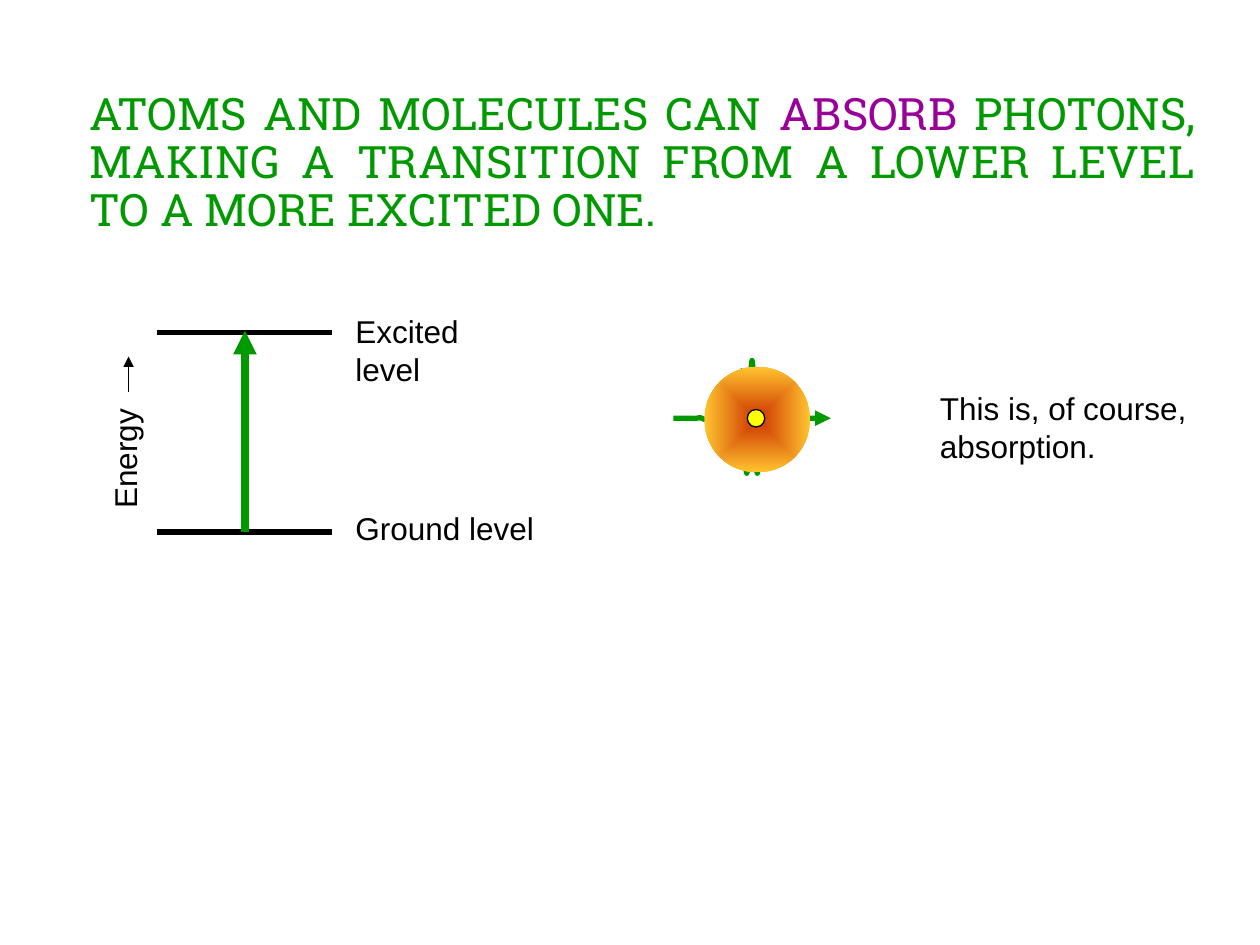
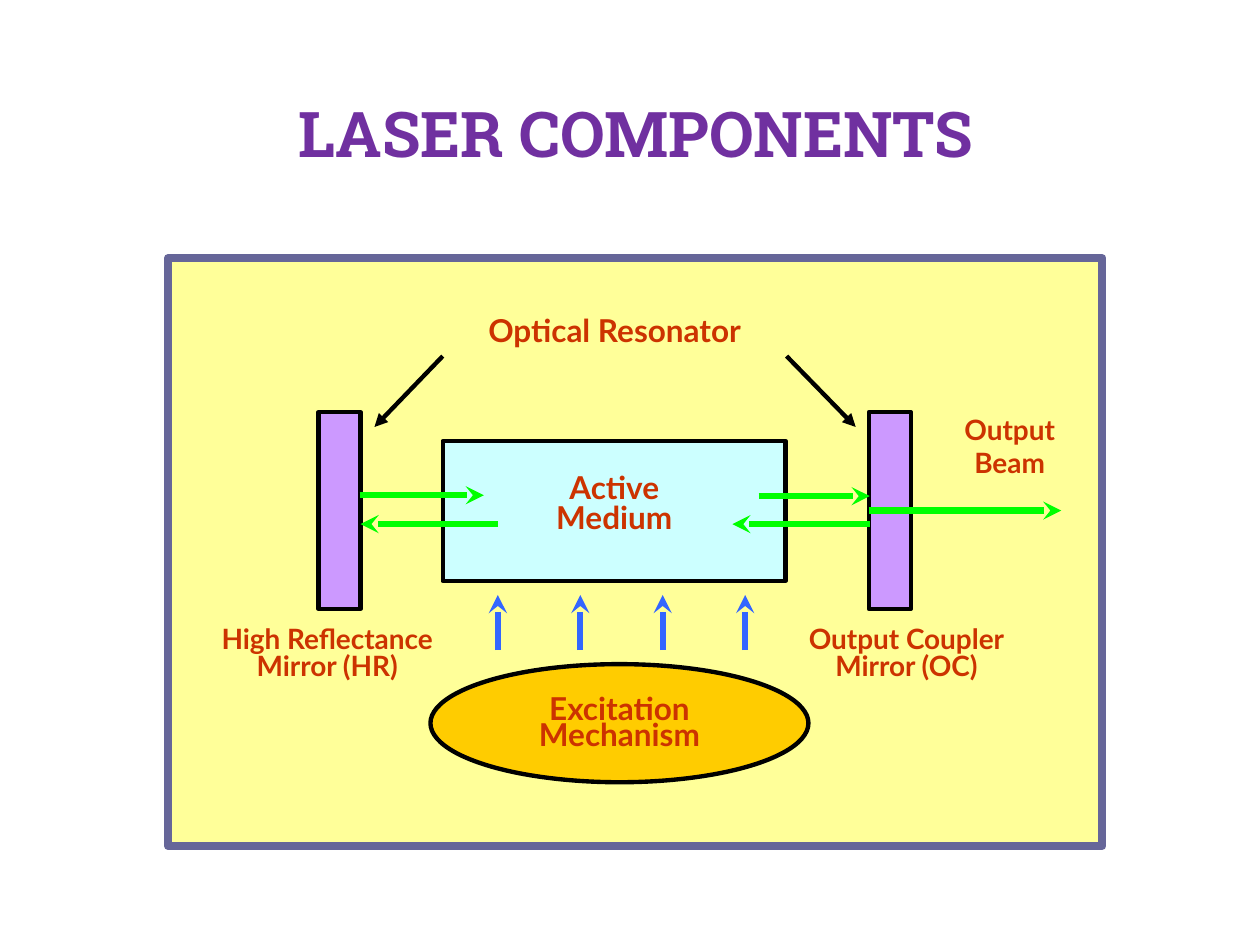
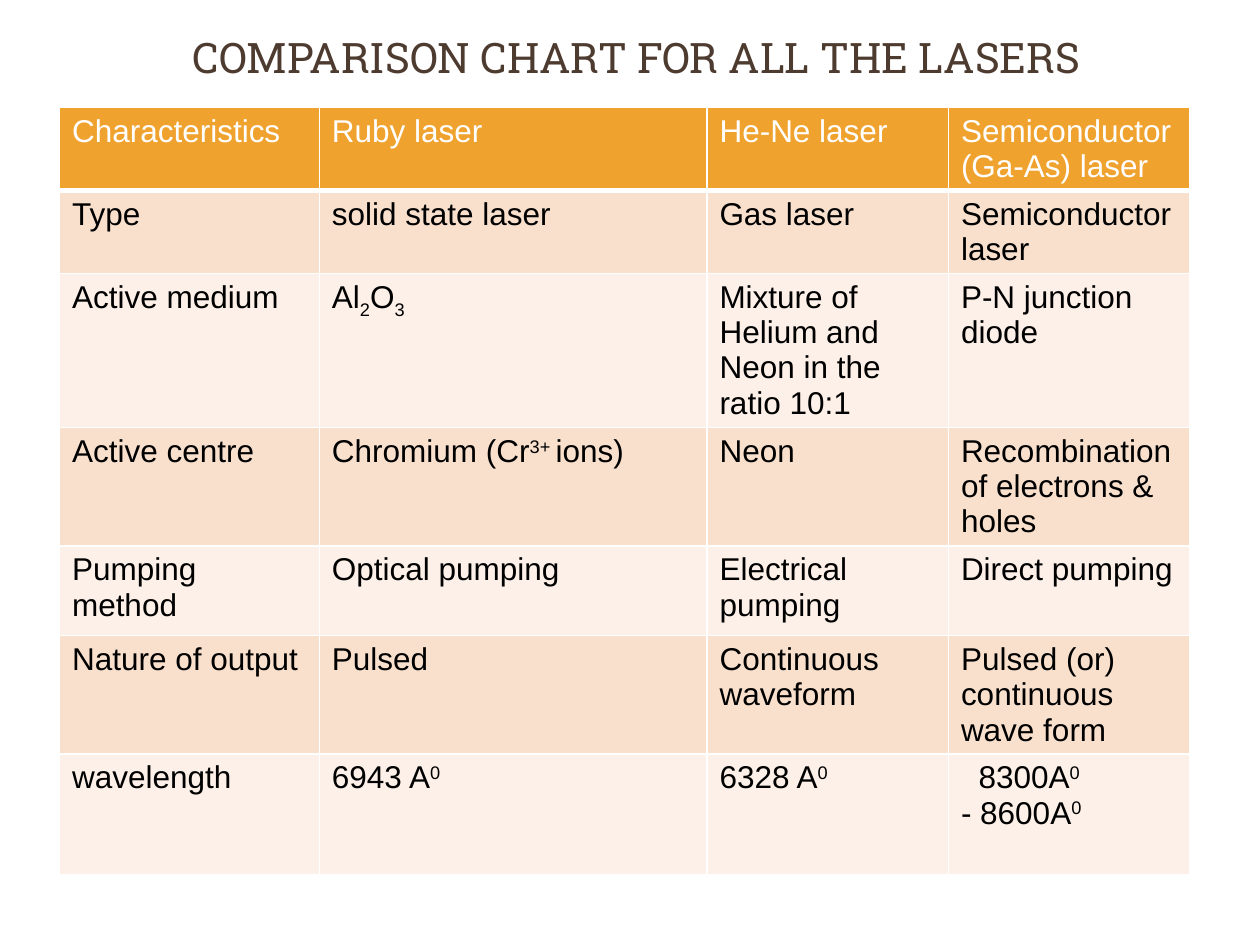
"""Build three slides on photon absorption, laser components and laser types."""
import math

import lxml.etree
import pptx
import pptx.dml.color
import pptx.enum.shapes
import pptx.enum.text
import pptx.oxml.ns
import pptx.util

Pt = pptx.util.Pt
RGBColor = pptx.dml.color.RGBColor
qn = pptx.oxml.ns.qn
ALIGN = pptx.enum.text.PP_ALIGN
ANCHOR = pptx.enum.text.MSO_ANCHOR
SHAPE = pptx.enum.shapes.MSO_SHAPE

BLACK = RGBColor(0x00, 0x00, 0x00)
WHITE = RGBColor(0xFF, 0xFF, 0xFF)
GREEN = RGBColor(0x00, 0x99, 0x00)
MAGENTA = RGBColor(0x99, 0x00, 0x99)
PURPLE = RGBColor(0x70, 0x30, 0xA0)
BROWN = RGBColor(0x4E, 0x3B, 0x30)
RUST = RGBColor(0xCC, 0x33, 0x00)
AMBER = RGBColor(0xFF, 0xC4, 0x2F)
YELLOW = RGBColor(0xFF, 0xFF, 0x00)
PALE_YELLOW = RGBColor(0xFF, 0xFF, 0x99)
SLATE = RGBColor(0x66, 0x66, 0x99)
PALE_CYAN = RGBColor(0xCC, 0xFF, 0xFF)
LILAC = RGBColor(0xCC, 0x99, 0xFF)
GOLD = RGBColor(0xFF, 0xCC, 0x00)
LIME = RGBColor(0x00, 0xFF, 0x00)
BLUE = RGBColor(0x33, 0x66, 0xFF)
HEADER = RGBColor(0xF0, 0xA2, 0x2E)
BANDS = [RGBColor(0xFC, 0xF0, 0xE8), RGBColor(0xF9, 0xE0, 0xCD)]

TITLE_FONT, BODY_FONT, DIAGRAM_FONT = "Roboto Slab", "Arial", "Lato"

ABSORPTION_TITLE = [
    ("ATOMS AND MOLECULES CAN ", GREEN),
    ("ABSORB", MAGENTA),
    (" PHOTONS, MAKING A TRANSITION FROM A LOWER LEVEL TO A MORE EXCITED ONE.", GREEN),
]
COMPONENTS_TITLE = [("LASER COMPONENTS", PURPLE)]
COMPARISON_TITLE = [("COMPARISON CHART FOR ALL THE LASERS", BROWN)]

LEVEL_LABELS = [
    (["Ground level"], (196, 287.5, 116.5, 29)),
    (["Excited level"], (196, 175, 115, 29)),
]
LEVEL_HEIGHTS = [304, 190]
PHOTON_CENTRE, PHOTON_HALF_LENGTH, PHOTON_STEP = (429.75, 239), 45, 0.25
PHOTON_AMPLITUDE, PHOTON_PERIOD, PHOTON_WIDTH = 33, 6.05, 13.6

BEAMS = [
    ((433.5, 283.5), (497, 283.5)),
    ((205.5, 283), (276.5, 283)),
    ((284.5, 299.5), (206, 299.5)),
    ((497, 299.5), (418.5, 299.5)),
]
POINTERS = [((253, 203.5), (214, 244)), ((449.5, 203.5), (489, 244))]
PUMP_LEFT, PUMP_GAP, PUMP_COUNT = 284.5, 47.1, 4
MIRROR_LABELS = [
    (["High Reflectance", "Mirror (HR)"], (103.5, 355.5, 167, 38)),
    (["Output Coupler", "Mirror (OC)"], (452, 355.5, 132, 38)),
]

COLUMN_WIDTHS = [148.5, 221.5, 138, 138]
ROW_HEIGHTS = [47.5, 47.5, 88, 67.5, 51.25, 67.5, 69]
COMPARISON = [
    ["Characteristics", "Ruby laser", "He-Ne laser", "Semiconductor (Ga-As) laser"],
    ["Type", "solid state laser", "Gas laser", "Semiconductor laser"],
    ["Active medium", "Al|_2|O|_3", "Mixture of Helium and Neon in the ratio 10:1",
     "P-N junction diode"],
    ["Active centre", "Chromium (Cr|^3+ |ions)", "Neon", "Recombination of electrons & holes"],
    ["Pumping method", "Optical pumping", "Electrical pumping", "Direct pumping"],
    ["Nature of output", "Pulsed", "Continuous waveform", "Pulsed (or) continuous wave form"],
    ["wavelength", "6943 A|^0", "6328 A|^0", "8300A|^0\n- 8600A|^0"],
]
BASELINES = {"_": "-25000", "^": "30000"}
WAVELENGTH_INDENT = 10


def points(values):
    return [Pt(value) for value in values]


def set_font(font, name, size, color, bold=False):
    font.name, font.size, font.bold = name, Pt(size), bold
    font.color.rgb = color


def add_titled_slide(presentation, parts, box, size, bold=False, align=ALIGN.CENTER,
                     anchor=ANCHOR.MIDDLE, spacing=1.0):
    slide = presentation.slides.add_slide(presentation.slide_layouts[5])
    title = slide.shapes.title
    title.left, title.top, title.width, title.height = points(box)
    frame = title.text_frame
    frame.auto_size = pptx.enum.text.MSO_AUTO_SIZE.NONE
    frame.word_wrap = True
    frame.vertical_anchor = anchor
    paragraph = frame.paragraphs[0]
    paragraph.alignment, paragraph.line_spacing = align, spacing
    set_font(paragraph.font, TITLE_FONT, size, parts[0][1], bold)
    for text, color in parts:
        run = paragraph.add_run()
        run.text = text
        if color != parts[0][1]:
            run.font.color.rgb = color
    return slide


def add_label(slide, lines, box, font=BODY_FONT, size=18, color=BLACK, bold=False,
              align=ALIGN.LEFT, spacing=1.0, wrap=False, fill=None):
    label = slide.shapes.add_textbox(*points(box))
    if fill is not None:
        label.fill.solid()
        label.fill.fore_color.rgb = fill
    frame = label.text_frame
    frame.word_wrap = wrap
    for index, line in enumerate(lines):
        paragraph = frame.add_paragraph() if index else frame.paragraphs[0]
        paragraph.text = line
        paragraph.alignment, paragraph.line_spacing = align, spacing
        set_font(paragraph.font, font, size, color, bold)
    return label


def add_diagram_label(slide, lines, box, size=18, spacing=0.8, **options):
    return add_label(slide, lines, box, DIAGRAM_FONT, size, RUST, True,
                     ALIGN.CENTER, spacing, **options)


def style_line(shape, color, width, head=None):
    shape.line.color.rgb = color
    shape.line.width = Pt(width)
    if head:
        outline = shape.element.spPr.find(qn("a:ln"))
        lxml.etree.SubElement(outline, qn("a:tailEnd"), type=head)


def add_line(slide, start, end, color, width, head=None):
    line = slide.shapes.add_connector(
        pptx.enum.shapes.MSO_CONNECTOR.STRAIGHT, *points((*start, *end)))
    style_line(line, color, width, head)
    lxml.etree.SubElement(line.element.spPr, qn("a:effectLst"))
    return line


def add_block(slide, kind, box, fill, line=BLACK, width=2.5):
    block = slide.shapes.add_shape(kind, *points(box))
    block.shadow.inherit = False
    block.fill.solid()
    block.fill.fore_color.rgb = fill
    style_line(block, line, width)
    return block


def add_photon(slide):
    centre_x, centre_y = PHOTON_CENTRE
    steps = int(PHOTON_HALF_LENGTH / PHOTON_STEP)
    wave = []
    for step in range(-steps, steps + 1):
        offset = step * PHOTON_STEP
        envelope = PHOTON_AMPLITUDE * math.exp(-(offset / PHOTON_WIDTH) ** 2)
        height = envelope * math.cos(2 * math.pi * offset / PHOTON_PERIOD)
        wave.append((Pt(centre_x + offset), Pt(centre_y - height)))
    builder = slide.shapes.build_freeform(*wave[0])
    builder.add_line_segments(wave[1:], close=False)
    photon = builder.convert_to_shape()
    photon.shadow.inherit = False
    photon.fill.background()
    style_line(photon, GREEN, 3, "triangle")


def add_atom(slide):
    cloud = slide.shapes.add_shape(SHAPE.OVAL, *points((402.5, 209.5, 60.5, 60.5)))
    cloud.shadow.inherit = False
    cloud.line.fill.background()
    cloud.fill.gradient()
    for stop, color in zip(cloud.fill.gradient_stops, (RUST, AMBER)):
        stop.color.rgb = color
    gradient = cloud.element.spPr.find(qn("a:gradFill"))
    gradient.remove(gradient.find(qn("a:lin")))
    shading = lxml.etree.SubElement(gradient, qn("a:path"), path="shape")
    lxml.etree.SubElement(shading, qn("a:fillToRect"),
                          {side: "50000" for side in "ltrb"})
    add_block(slide, SHAPE.OVAL, (427, 234, 10, 10), YELLOW, width=0.75)


def build_absorption(presentation):
    slide = add_titled_slide(presentation, ABSORPTION_TITLE, (44, 36.75, 646.5, 102), 25.5,
                             align=ALIGN.JUSTIFY, anchor=ANCHOR.BOTTOM, spacing=0.9)
    add_label(slide, ["This is, of course, absorption."], (530, 219, 168, 51), wrap=True)
    add_photon(slide)
    add_atom(slide)
    for height in LEVEL_HEIGHTS:
        add_line(slide, (89.5, height), (190, height), BLACK, 3)
    energy = add_label(slide, ["Energy"], (35.5, 247.5, 71.5, 29))
    energy.rotation = 270
    add_line(slide, (73.5, 224), (73.5, 203.75), BLACK, 0.75, "triangle")
    for lines, box in LEVEL_LABELS:
        add_label(slide, lines, box)
    add_line(slide, (140, 304), (140, 189), GREEN, 4.5, "triangle")


def build_components(presentation):
    slide = add_titled_slide(presentation, COMPONENTS_TITLE, (57.5, 50.5, 612, 72.5), 36,
                             bold=True, anchor=ANCHOR.TOP)
    add_block(slide, SHAPE.RECTANGLE, (96, 147.5, 534, 336), PALE_YELLOW, SLATE, 4.5)
    add_block(slide, SHAPE.RECTANGLE, (253, 252, 196, 80), PALE_CYAN)
    high_reflector, output_coupler = [
        add_block(slide, SHAPE.RECTANGLE, (left, 235.5, 24, 112.5), LILAC)
        for left in (182, 496.5)]
    for lines, box in MIRROR_LABELS:
        add_diagram_label(slide, lines, box, 16, fill=PALE_YELLOW)
    add_diagram_label(slide, ["Active", "Medium"], (306, 268, 90, 46))
    for start, end in BEAMS:
        add_line(slide, start, end, LIME, 3.5, "stealth")
    add_block(slide, SHAPE.OVAL, (246, 379.5, 216, 67.5), GOLD)
    output_beam = add_line(slide, (496.5, 291.75), (606.5, 291.75), LIME, 3.5, "stealth")
    output_beam.begin_connect(output_coupler, 1)
    add_diagram_label(slide, ["Output", "Beam"], (543.5, 232, 67, 46), 16, 1.0,
                      fill=PALE_YELLOW)
    for index in range(PUMP_COUNT):
        left = PUMP_LEFT + index * PUMP_GAP
        add_line(slide, (left, 371.5), (left, 340), BLUE, 3.5, "stealth")
    add_diagram_label(slide, ["Excitation Mechanism"], (276.5, 396, 155, 41), spacing=0.7,
                      wrap=True)
    add_diagram_label(slide, ["Optical Resonator"], (237.5, 180, 227.5, 24), spacing=0.7,
                      wrap=True)
    for start, end in POINTERS:
        add_line(slide, start, end, BLACK, 2.5, "triangle")


def set_borders(cell, bottom):
    properties = cell._tc.get_or_add_tcPr()
    for side, width in (("L", 1), ("R", 1), ("T", 1), ("B", bottom)):
        border = lxml.etree.SubElement(properties, qn("a:ln" + side), w=str(Pt(width)))
        fill = lxml.etree.SubElement(border, qn("a:solidFill"))
        lxml.etree.SubElement(fill, qn("a:srgbClr"), val=str(WHITE))


def fill_cell(cell, content, is_header, band):
    set_borders(cell, 3 if is_header else 1)
    cell.fill.solid()
    cell.fill.fore_color.rgb = HEADER if is_header else band
    lines = content.split("\n")
    for index, line in enumerate(lines):
        frame = cell.text_frame
        paragraph = frame.add_paragraph() if index else frame.paragraphs[0]
        if len(lines) > 1 and index == 0:
            paragraph._p.get_or_add_pPr().set("marL", str(Pt(WAVELENGTH_INDENT)))
        set_font(paragraph.font, BODY_FONT, 18, WHITE if is_header else BLACK)
        for part in line.split("|"):
            run = paragraph.add_run()
            run.text = part.lstrip("_^")
            if part[0] in BASELINES:
                run._r.get_or_add_rPr().set("baseline", BASELINES[part[0]])


def build_comparison(presentation):
    slide = add_titled_slide(presentation, COMPARISON_TITLE, (58.5, 8.5, 610.5, 47.5), 24)
    box = (34, 61.25, sum(COLUMN_WIDTHS), sum(ROW_HEIGHTS))
    table = slide.shapes.add_table(len(ROW_HEIGHTS), len(COLUMN_WIDTHS), *points(box)).table
    for column, width in zip(table.columns, COLUMN_WIDTHS):
        column.width = Pt(width)
    for row, height in zip(table.rows, ROW_HEIGHTS):
        row.height = Pt(height)
    for row_index, contents in enumerate(COMPARISON):
        for column_index, content in enumerate(contents):
            fill_cell(table.cell(row_index, column_index), content,
                      row_index == 0, BANDS[row_index % 2])


def main():
    presentation = pptx.Presentation()
    presentation.slide_width, presentation.slide_height = Pt(720), Pt(540)
    build_absorption(presentation)
    build_components(presentation)
    build_comparison(presentation)
    presentation.save("out.pptx")


if __name__ == "__main__":
    main()
